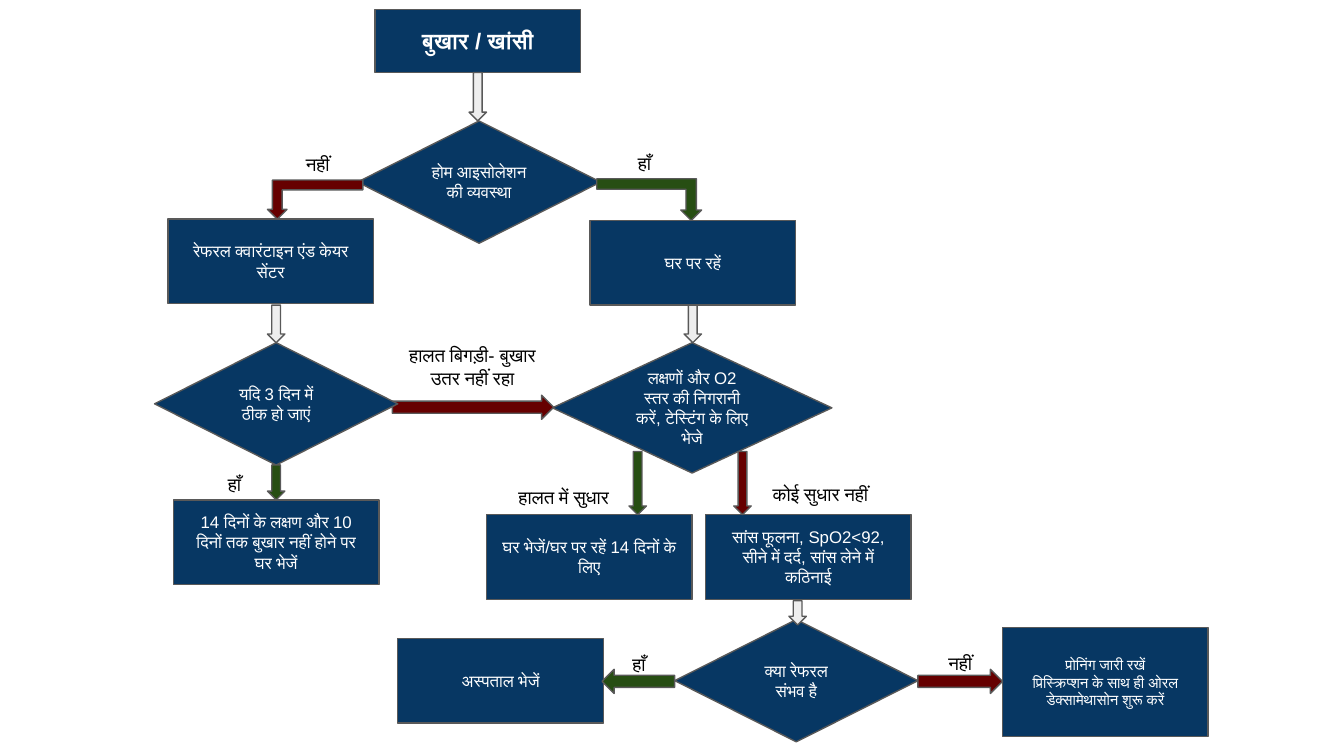
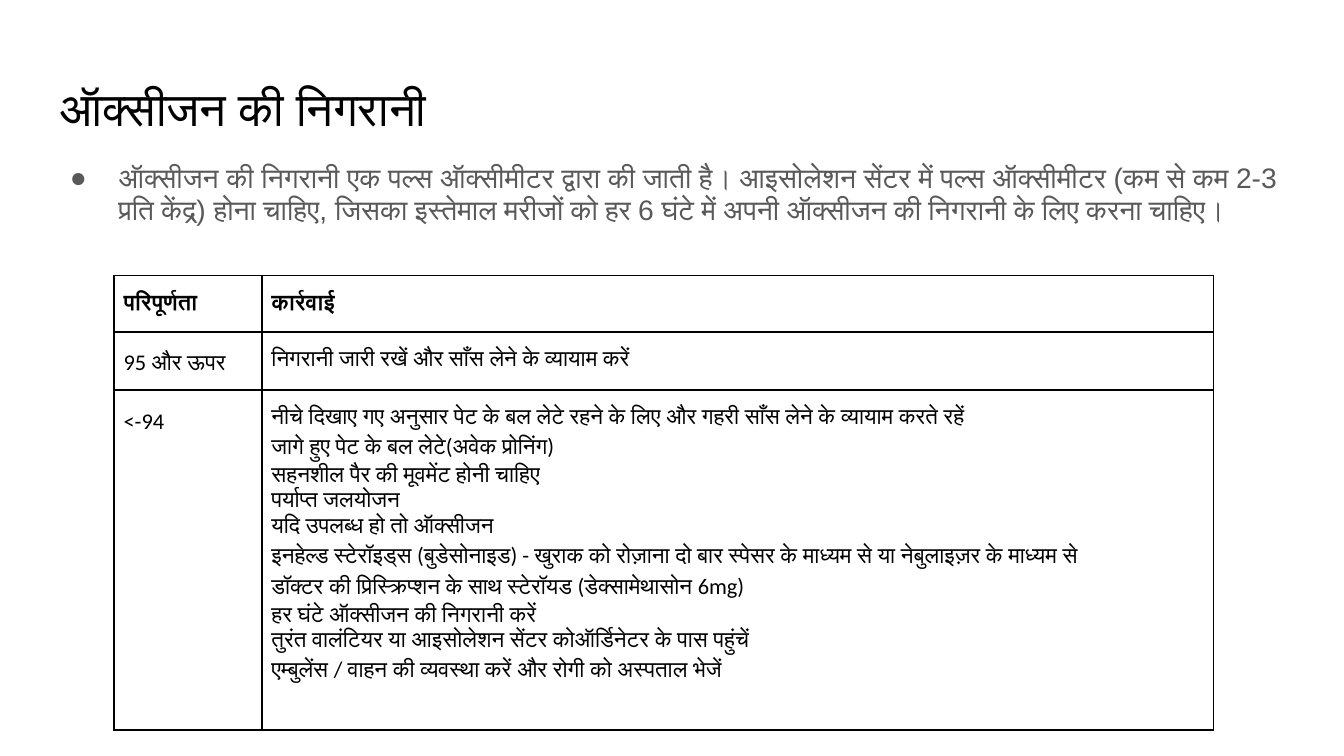
"""Build two slides on fever triage and oxygen monitoring."""
from dataclasses import dataclass

from lxml import etree
from pptx import Presentation
from pptx.dml.color import RGBColor
from pptx.enum.shapes import MSO_SHAPE
from pptx.enum.text import MSO_ANCHOR, MSO_AUTO_SIZE, PP_ALIGN
from pptx.oxml.ns import qn
from pptx.util import Inches, Pt

RECT, DIAMOND = MSO_SHAPE.RECTANGLE, MSO_SHAPE.DIAMOND
DOWN, RIGHT, BENT = MSO_SHAPE.DOWN_ARROW, MSO_SHAPE.RIGHT_ARROW, MSO_SHAPE.BENT_UP_ARROW
LEFT_ALIGN, CENTER, RIGHT_ALIGN, JUSTIFY = (
    PP_ALIGN.LEFT, PP_ALIGN.CENTER, PP_ALIGN.RIGHT, PP_ALIGN.JUSTIFY)
TOP, MIDDLE, BOTTOM = MSO_ANCHOR.TOP, MSO_ANCHOR.MIDDLE, MSO_ANCHOR.BOTTOM
NO_AUTOSIZE = MSO_AUTO_SIZE.NONE
TITLE_AND_CONTENT, BLANK = 1, 6


@dataclass(frozen=True)
class Theme:
    """Colours, fonts and type sizes of the deck."""
    navy: str = "073763"
    grey: str = "595959"
    pale: str = "EEEEEE"
    green: str = "274E13"
    red: str = "660000"
    white: str = "FFFFFF"
    black: str = "000000"
    font: str = "Arial"
    table_font: str = "Calibri"
    title: float = 25.2
    body: float = 15.1
    table: float = 12
    start: float = 12
    label: float = 10
    step: float = 9
    small: float = 8
    outline: float = 0.75
    border: float = 1


THEME = Theme()


@dataclass(frozen=True)
class Step:
    """A box or a decision of the flow."""
    text: str
    left: float
    top: float
    width: float = 1.53
    height: float = 0.63
    kind: MSO_SHAPE = RECT
    size: float = THEME.step
    bold: bool = False


@dataclass(frozen=True)
class Arrow:
    """A block arrow between two steps."""
    left: float
    top: float
    height: float
    width: float = 0.13
    kind: MSO_SHAPE = DOWN
    color: str = THEME.pale
    flipped: bool = False


@dataclass(frozen=True)
class Label:
    """The answer written beside an arrow."""
    text: str
    left: float
    top: float
    width: float = 0.73
    height: float = 0.37
    align: PP_ALIGN = CENTER
    anchor: MSO_ANCHOR = TOP


def decision(text: str, left: float, top: float, width: float = 1.81,
             height: float = 0.91) -> Step:
    """Return a diamond step."""
    return Step(text, left, top, width, height, DIAMOND)


FLOW = (
    Step("बुखार / खांसी", 2.79, 0.07, height=0.47, size=THEME.start, bold=True),
    Arrow(3.49, 0.54, 0.36),
    decision("होम आइसोलेशन की व्यवस्था", 2.66, 0.9),
    Step("घर पर रहें", 4.39, 1.64),
    Arrow(4.44, 1.33, 0.31, 0.78, BENT, THEME.green, flipped=True),
    Label("हाँ", 4.43, 1.03),
    Step("रेफरल क्वारंटाइन एंड केयर सेंटर", 1.25, 1.63),
    Arrow(1.99, 2.27, 0.28),
    Arrow(1.99, 1.34, 0.29, 0.71, BENT, THEME.red),
    Label("नहीं", 2, 1.04),
    Arrow(5.09, 2.27, 0.28),
    decision("लक्षणों और O2 स्तर की निगरानी करें, टेस्टिंग के लिए भेजे",
             4.11, 2.55, 2.08, 0.97),
    Arrow(2.92, 2.94, 0.18, 1.2, RIGHT, THEME.red),
    Label("हालत बिगड़ी- बुखार उतर नहीं रहा", 2.86, 2.46, 1.31, 0.54),
    Step("घर भेजें/घर पर रहें 14 दिनों के लिए", 3.62, 3.83),
    Arrow(4.68, 3.36, 0.47, color=THEME.green),
    Label("हालत में सुधार", 3.01, 3.34, 1.62, 0.54, RIGHT_ALIGN, BOTTOM),
    decision("क्या रेफरल संभव है", 5.02, 4.61),
    Step("प्रोनिंग जारी रखें\nप्रिस्क्रिप्शन के साथ ही ओरल डेक्सामेथासोन शुरू करें",
         7.46, 4.67, height=0.81, size=THEME.small),
    Arrow(6.83, 4.98, 0.18, 0.63, RIGHT, THEME.red),
    Label("नहीं", 6.78, 4.75, height=0.54),
    Step("अस्पताल भेजें", 2.96, 4.75),
    Label("हाँ", 4.39, 4.76),
    Arrow(4.48, 4.98, 0.18, 0.54, RIGHT, THEME.green, flipped=True),
    Step("सांस फूलना, SpO2<92, सीने में दर्द, सांस लेने में कठिनाई", 5.25, 3.83),
    Arrow(5.87, 4.47, 0.18),
    Arrow(5.46, 3.36, 0.47, color=THEME.red),
    Label("कोई सुधार नहीं", 5.65, 3.32, 1.2, 0.54, LEFT_ALIGN, BOTTOM),
    decision("यदि 3 दिन में ठीक हो जाएं", 1.15, 2.55),
    Step("14 दिनों के लक्षण और 10 दिनों तक बुखार नहीं होने पर घर भेजें", 1.29, 3.72),
    Label("हाँ", 1.38, 3.42, height=0.54),
    Arrow(1.99, 3.46, 0.26, color=THEME.green),
)

MONITORING_TITLE = "ऑक्सीजन की निगरानी"
MONITORING_NOTE = (
    "ऑक्सीजन की निगरानी एक पल्स ऑक्सीमीटर द्वारा की जाती है। आइसोलेशन सेंटर में पल्स "
    "ऑक्सीमीटर (कम से कम 2-3 प्रति केंद्र) होना चाहिए, जिसका इस्तेमाल मरीजों को हर 6 घंटे "
    "में अपनी ऑक्सीजन की निगरानी के लिए करना चाहिए।")
LOW_SATURATION_ACTIONS = (
    "नीचे दिखाए गए अनुसार पेट के बल लेटे रहने के लिए और गहरी साँस लेने के व्यायाम करते रहें",
    "जागे हुए पेट के बल लेटे(अवेक प्रोनिंग)",
    "सहनशील पैर की मूवमेंट होनी चाहिए",
    "पर्याप्त जलयोजन",
    "यदि उपलब्ध हो तो ऑक्सीजन",
    "इनहेल्ड स्टेरॉइड्स (बुडेसोनाइड) - खुराक को रोज़ाना दो बार स्पेसर के माध्यम से या "
    "नेबुलाइज़र के माध्यम से",
    "डॉक्टर की प्रिस्क्रिप्शन के साथ स्टेरॉयड (डेक्सामेथासोन 6mg)",
    "हर घंटे ऑक्सीजन की निगरानी करें",
    "तुरंत वालंटियर या आइसोलेशन सेंटर कोऑर्डिनेटर के पास पहुंचें",
    "एम्बुलेंस / वाहन की व्यवस्था करें और रोगी को अस्पताल भेजें",
)
SATURATION_ROWS = (
    ("परिपूर्णता", "कार्रवाई"),
    ("95 और ऊपर", "निगरानी जारी रखें और साँस लेने के व्यायाम करें"),
    ("<-94", "\n".join(LOW_SATURATION_ACTIONS)),
)
COLUMN_WIDTHS = (1.1, 7.08)
ROW_HEIGHTS = (0.42, 0.15, 2.53)


def rgb(color: str) -> RGBColor:
    """Return a colour from its hex digits."""
    return RGBColor.from_string(color)


def place(left: float, top: float, width: float, height: float) -> tuple:
    """Return a frame in slide units."""
    return Inches(left), Inches(top), Inches(width), Inches(height)


def write(frame, text: str, size: float, color: str, align: PP_ALIGN = LEFT_ALIGN,
          bold: bool = False, font: str = THEME.font, spacing: float = 1) -> None:
    """Fill a text frame and format its paragraphs and runs."""
    frame.text = text
    for paragraph in frame.paragraphs:
        paragraph.alignment = align
        paragraph.line_spacing = spacing
        paragraph.space_before = Pt(0)
        for run in paragraph.runs:
            run.font.size = Pt(size)
            run.font.bold = bold
            run.font.color.rgb = rgb(color)
            run.font.name = font


def fit(frame, anchor: MSO_ANCHOR) -> None:
    """Set wrapping, equal insets and the anchor of a text frame."""
    frame.word_wrap = True
    frame.auto_size = NO_AUTOSIZE
    frame.vertical_anchor = anchor
    frame.margin_left = frame.margin_right = Inches(0.1)
    frame.margin_top = frame.margin_bottom = Inches(0.1)


def add_block(slide, item, color: str):
    """Add a filled and outlined shape for a step or an arrow."""
    block = slide.shapes.add_shape(
        item.kind, *place(item.left, item.top, item.width, item.height))
    block.shadow.inherit = False
    block.fill.solid()
    block.fill.fore_color.rgb = rgb(color)
    block.line.color.rgb = rgb(THEME.grey)
    block.line.width = Pt(THEME.outline)
    return block


def draw_step(slide, step: Step) -> None:
    """Draw a step with its text."""
    frame = add_block(slide, step, THEME.navy).text_frame
    fit(frame, MIDDLE)
    write(frame, step.text, step.size, THEME.white, CENTER, step.bold)


def draw_arrow(slide, arrow: Arrow) -> None:
    """Draw an arrow, turning bent ones downwards."""
    block = add_block(slide, arrow, arrow.color)
    if arrow.kind == BENT:
        block.rotation = 180
    if arrow.flipped:
        block._element.spPr.get_or_add_xfrm().set("flipH", "1")


def draw_label(slide, label: Label) -> None:
    """Draw the text beside an arrow."""
    frame = slide.shapes.add_textbox(
        *place(label.left, label.top, label.width, label.height)).text_frame
    fit(frame, label.anchor)
    write(frame, label.text, THEME.label, THEME.black, label.align)


DRAWERS = {Step: draw_step, Arrow: draw_arrow, Label: draw_label}


def fill_placeholder(holder, frame_at: tuple, anchor: MSO_ANCHOR) -> None:
    """Move a placeholder and set up its text frame."""
    holder.left, holder.top, holder.width, holder.height = frame_at
    fit(holder.text_frame, anchor)


def add_bullet(paragraph) -> None:
    """Give a paragraph a hanging round bullet."""
    properties = paragraph._p.get_or_add_pPr()
    properties.set("marL", str(Inches(0.5)))
    properties.set("indent", str(Inches(-0.36)))
    bullet_color = etree.SubElement(properties, qn("a:buClr"))
    etree.SubElement(bullet_color, qn("a:srgbClr"), val=THEME.grey)
    etree.SubElement(properties, qn("a:buFont"), typeface=THEME.font)
    etree.SubElement(properties, qn("a:buChar"), char="●")


def add_borders(cell) -> None:
    """Draw a black line on each side of a cell."""
    properties = cell._tc.get_or_add_tcPr()
    for side in ("a:lnL", "a:lnR", "a:lnT", "a:lnB"):
        edge = etree.SubElement(properties, qn(side), w=str(Pt(THEME.border)))
        fill = etree.SubElement(edge, qn("a:solidFill"))
        etree.SubElement(fill, qn("a:srgbClr"), val=THEME.black)


def draw_saturation_table(slide) -> None:
    """Draw the table of saturation levels and actions."""
    table = slide.shapes.add_table(
        len(ROW_HEIGHTS), len(COLUMN_WIDTHS),
        *place(0.85, 2.05, sum(COLUMN_WIDTHS), sum(ROW_HEIGHTS))).table
    table.first_row = table.horz_banding = False
    for column, width in zip(table.columns, COLUMN_WIDTHS):
        column.width = Inches(width)
    for index, (row, height, texts) in enumerate(
            zip(table.rows, ROW_HEIGHTS, SATURATION_ROWS)):
        row.height = Inches(height)
        for cell, text in zip(row.cells, texts):
            cell.margin_left = cell.margin_right = Inches(0.07)
            cell.margin_top = cell.margin_bottom = Inches(0.1)
            add_borders(cell)
            cell.fill.background()
            write(cell.text_frame, text, THEME.table, THEME.black, bold=index == 0,
                  font=THEME.table_font, spacing=1.15)


def build_flow_slide(deck) -> None:
    """Build the triage flow."""
    slide = deck.slides.add_slide(deck.slide_layouts[BLANK])
    for item in FLOW:
        DRAWERS[type(item)](slide, item)


def build_monitoring_slide(deck) -> None:
    """Build the oxygen monitoring slide."""
    slide = deck.slides.add_slide(deck.slide_layouts[TITLE_AND_CONTENT])
    title, note = slide.shapes.title, slide.placeholders[1]
    fill_placeholder(title, place(0.34, 0.49, 9.32, 0.63), MIDDLE)
    write(title.text_frame, MONITORING_TITLE, THEME.title, THEME.black)
    fill_placeholder(note, place(0.28, 1.11, 9.32, 0.94), TOP)
    write(note.text_frame, MONITORING_NOTE, THEME.body, THEME.grey, JUSTIFY, spacing=0.95)
    add_bullet(note.text_frame.paragraphs[0])
    draw_saturation_table(slide)


def main() -> None:
    """Build and save the deck."""
    deck = Presentation()
    deck.slide_width = Inches(10)
    deck.slide_height = deck.slide_width * 9 // 16
    build_flow_slide(deck)
    build_monitoring_slide(deck)
    deck.save("out.pptx")


if __name__ == "__main__":
    main()
